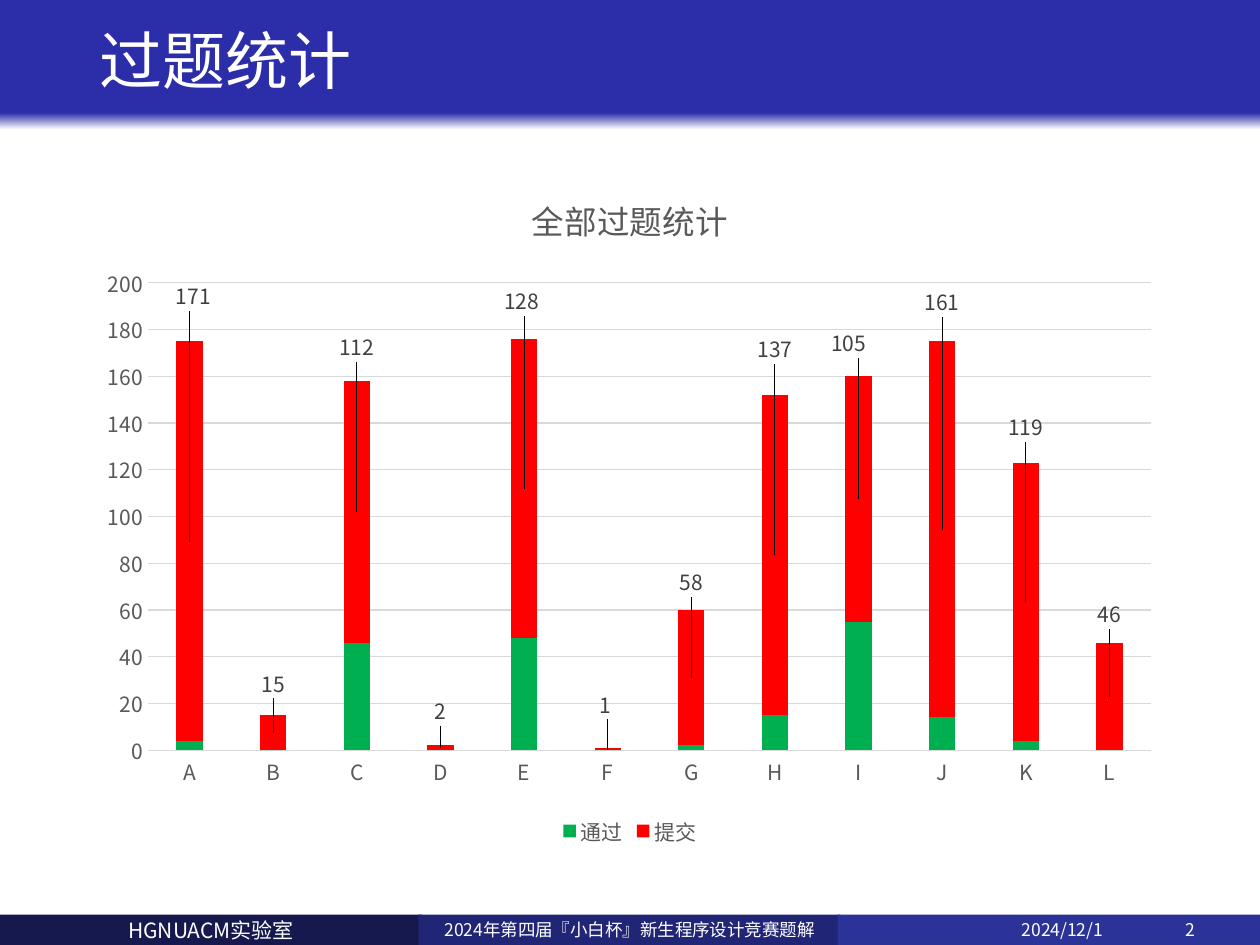
import copy

import pptx
import pptx.chart.data
import pptx.dml.color
import pptx.enum.chart
import pptx.enum.shapes
import pptx.enum.text
import pptx.oxml
import pptx.oxml.ns
import pptx.util
from lxml import etree
from pptx.util import Inches

COLORS = {
    "white": "FFFFFF", "banner": "2C2DA9", "footer_dark": "16194D",
    "footer_middle": "212575", "footer_light": "2B3298", "text": "595959",
    "label": "404040", "grid": "D9D9D9", "passed": "00B050", "submitted": "FF0000",
}
CHINESE_FONT = "Noto Sans CJK SC"
NUMBER_FONT = "Noto Sans CJK JP"
PASSED = [4, 0, 46, 0, 48, 0, 2, 15, 55, 14, 4, 0]
SUBMITTED = [171, 15, 112, 2, 128, 1, 58, 137, 105, 161, 119, 46]
LABEL_LEVELS = [194.7, 28.7, 172.8, 17.1, 192.5, 19.7, 72.3, 172, 174.5, 192.1, 138.6, 58.6]
LABEL_SHIFTS = {0: 0.03, 4: -0.02, 5: -0.02, 8: -0.08}
AXIS_MAXIMUM = 200
PLOT_BOX = {"x": 0.056, "y": 0.17, "w": 0.924, "h": 0.682}


def rgb(name):
    """Return the named colour."""
    return pptx.dml.color.RGBColor.from_string(COLORS[name])


def style_font(font, size, color, name=CHINESE_FONT):
    """Set size, colour and Latin typeface of a font."""
    font.size = pptx.util.Pt(size)
    font.bold = False
    font.color.rgb = rgb(color)
    font.name = name


def add_east_asian(element, name=CHINESE_FONT):
    """Give every character style in the element an East Asian typeface."""
    for latin in element.findall(".//" + pptx.oxml.ns.qn("a:latin")):
        east_asian = etree.Element(pptx.oxml.ns.qn("a:ea"), typeface=name)
        latin.addnext(east_asian)


def write_text(shape, text, size, centered=False, name=CHINESE_FONT):
    """Write one vertically centred white line in a shape."""
    frame = shape.text_frame
    frame.word_wrap = True
    frame.vertical_anchor = pptx.enum.text.MSO_ANCHOR.MIDDLE
    paragraph = frame.paragraphs[0]
    paragraph.text = text
    alignment = pptx.enum.text.PP_ALIGN
    paragraph.alignment = alignment.CENTER if centered else alignment.LEFT
    style_font(paragraph.font, size, "white", name)
    add_east_asian(shape.element, name)
    return paragraph


def add_band(slide, left, top, width, height):
    """Add a rectangle without outline or shadow."""
    band = slide.shapes.add_shape(
        pptx.enum.shapes.MSO_SHAPE.RECTANGLE, left, top, width, height)
    band.shadow.inherit = False
    band.line.fill.background()
    return band


def add_footer(slide, left, top, width, height):
    """Add the three footer bands with the date and the slide number."""
    bands = [
        (0, "footer_dark", "HGNUACM实验室", 12),
        (3.32, "footer_middle", "2024年第四届『小白杯』新生程序设计竞赛题解", 10),
        (6.65, "footer_light", None, None),
    ]
    for offset, color, text, size in bands:
        band = add_band(slide, left + Inches(offset), top, Inches(3.35), height)
        band.fill.solid()
        band.fill.fore_color.rgb = rgb(color)
        if text:
            write_text(band, text, size, centered=True)
    for offset, box_width, text in [(8.01, 1.12, "2024/12/1"), (9.31, 0.6, "2")]:
        box = slide.shapes.add_textbox(left + Inches(offset), top, Inches(box_width), height)
        write_text(box, text, 10, name=NUMBER_FONT)


def add_banner(slide, left, top, width, height):
    """Add the fading banner and the slide title."""
    banner = add_band(slide, left, top, width, height)
    banner.fill.gradient()
    banner.fill.gradient_angle = 90
    stops = banner.fill.gradient_stops
    for stop, position, color in zip(stops, (0, 0.13), ("white", "banner")):
        stop.position = position
        stop.color.rgb = rgb(color)
    title = slide.shapes.add_textbox(
        left + Inches(0.69), top + Inches(0.05), Inches(8.62), Inches(0.92))
    write_text(title, "过题统计", 36).line_spacing = 0.9


def layout_xml(values, target=""):
    """Return a manual chart layout element."""
    items = "".join(f'<c:{key} val="{value:.4f}"/>' for key, value in values.items())
    return pptx.oxml.parse_xml(
        f'<c:layout {pptx.oxml.ns.nsdecls("c")}><c:manualLayout>{target}'
        f'<c:xMode val="edge"/><c:yMode val="edge"/>{items}</c:manualLayout></c:layout>'
        if target else
        f'<c:layout {pptx.oxml.ns.nsdecls("c")}><c:manualLayout>{items}'
        '</c:manualLayout></c:layout>')


def place_labels(series):
    """Lift each value label from its bar segment to its level on the axis."""
    labels = series.data_labels
    labels.show_value = True
    style_font(labels.font, 12, "label")
    container = series.format.line and series.points[0].data_label and labels._element
    text_style = container.find(pptx.oxml.ns.qn("c:txPr"))
    flags = {"LegendKey": 0, "Val": 1, "CatName": 0, "SerName": 0, "Percent": 0, "BubbleSize": 0}
    for index, level in enumerate(LABEL_LEVELS):
        middle = PASSED[index] + SUBMITTED[index] / 2
        label = pptx.oxml.parse_xml(
            f'<c:dLbl {pptx.oxml.ns.nsdecls("c")}><c:idx val="{index}"/>'
            + "".join(f'<c:show{key} val="{value}"/>' for key, value in flags.items())
            + "</c:dLbl>")
        offset = {"x": LABEL_SHIFTS.get(index, 0) / 8.62,
                  "y": (middle - level) * PLOT_BOX["h"] / AXIS_MAXIMUM}
        label.insert(1, layout_xml(offset))
        label.insert(2, copy.deepcopy(text_style))
        container.insert(index, label)


def style_axes(chart):
    """Style both axes and the horizontal grid."""
    for axis in (chart.category_axis, chart.value_axis):
        axis.major_tick_mark = pptx.enum.chart.XL_TICK_MARK.NONE
        axis.minor_tick_mark = pptx.enum.chart.XL_TICK_MARK.NONE
        style_font(axis.tick_labels.font, 12, "text")
    values = chart.value_axis
    values.minimum_scale, values.maximum_scale, values.major_unit = 0, AXIS_MAXIMUM, 20
    values.format.line.fill.background()
    for line in (chart.category_axis.format.line, values.major_gridlines.format.line):
        line.color.rgb = rgb("grid")
        line.width = pptx.util.Pt(0.75)


def add_statistics_chart(slide, left, top, width, height):
    """Add the stacked columns of passed and submitted solutions."""
    data = pptx.chart.data.CategoryChartData()
    data.categories = list("ABCDEFGHIJKL")
    data.add_series("通过", PASSED)
    data.add_series("提交", SUBMITTED)
    chart = slide.shapes.add_chart(
        pptx.enum.chart.XL_CHART_TYPE.COLUMN_STACKED, left, top, width, height, data).chart
    chart.font.size = pptx.util.Pt(10)
    chart.font.name = CHINESE_FONT
    chart.has_title = True
    paragraph = chart.chart_title.text_frame.paragraphs[0]
    paragraph.text = "全部过题统计"
    style_font(paragraph.font, 18.6, "text")
    chart.has_legend = True
    chart.legend.position = pptx.enum.chart.XL_LEGEND_POSITION.BOTTOM
    chart.legend.include_in_layout = False
    style_font(chart.legend.font, 12, "text")
    style_axes(chart)
    plot = chart.plots[0]
    plot.gap_width, plot.overlap, plot.vary_by_categories = 219, 100, False
    for series, color in zip(plot.series, ("passed", "submitted")):
        series.format.fill.solid()
        series.format.fill.fore_color.rgb = rgb(color)
        series.invert_if_negative = False
    place_labels(plot.series[1])
    area = chart.element.find(".//" + pptx.oxml.ns.qn("c:plotArea"))
    for layout in area.findall(pptx.oxml.ns.qn("c:layout")):
        area.remove(layout)
    area.insert(0, layout_xml(PLOT_BOX, '<c:layoutTarget val="inner"/>'))
    add_east_asian(chart.element)


def main():
    """Build and save the slide."""
    presentation = pptx.Presentation()
    presentation.slide_width, presentation.slide_height = Inches(10), Inches(7.5)
    slide = presentation.slides.add_slide(presentation.slide_layouts[6])
    add_footer(slide, 0, Inches(7.26), Inches(10), Inches(0.24))
    add_banner(slide, 0, 0, Inches(10), Inches(1.03))
    add_statistics_chart(slide, Inches(0.69), Inches(1.32), Inches(8.62), Inches(5.44))
    presentation.save("out.pptx")


if __name__ == "__main__":
    main()
